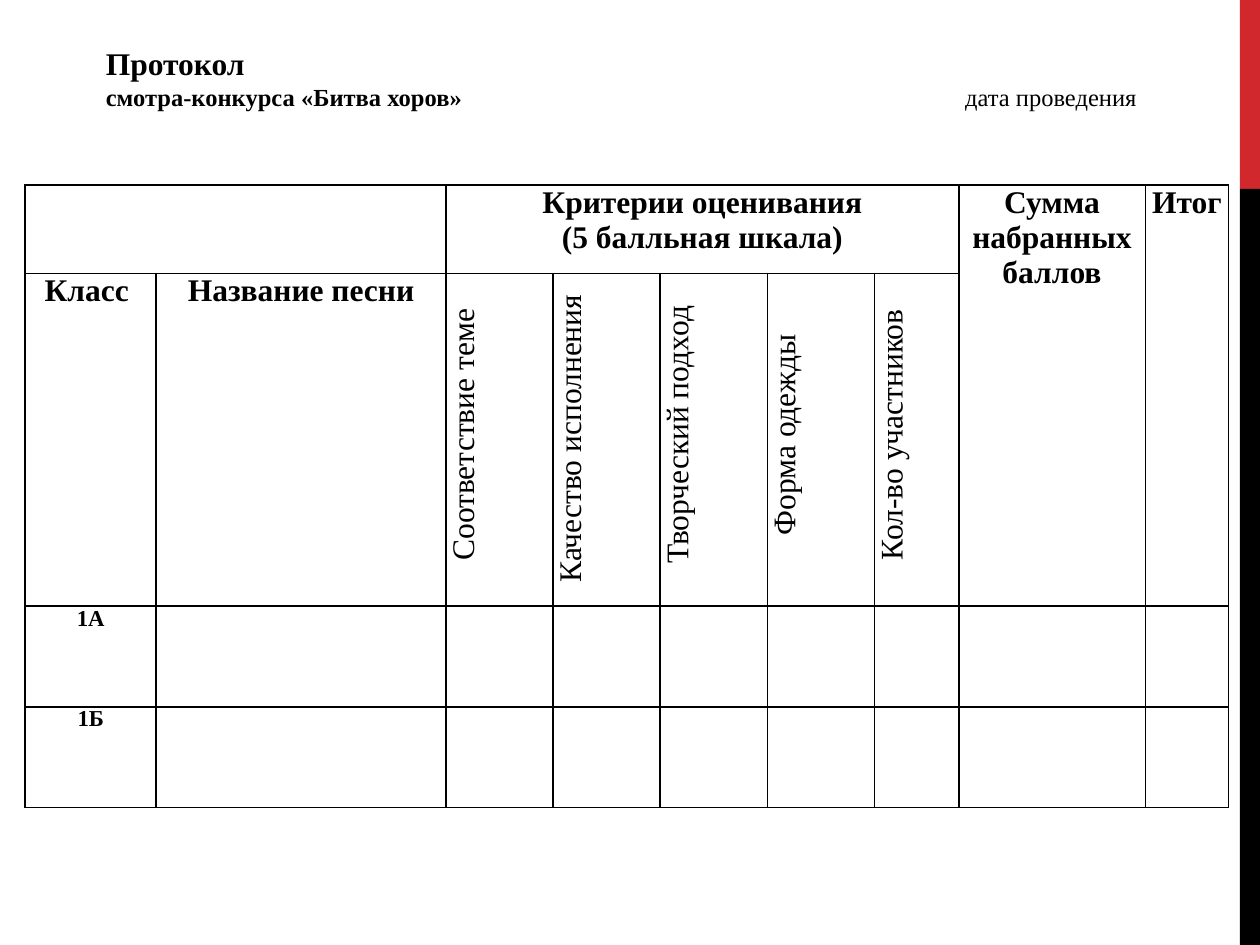
import pptx
import pptx.util
import pptx.dml.color
import pptx.enum.shapes
import pptx.enum.text
import pptx.oxml
import pptx.oxml.ns
from pptx.util import Inches

BLACK = pptx.dml.color.RGBColor(0x00, 0x00, 0x00)
RED = pptx.dml.color.RGBColor(0xD1, 0x28, 0x2E)
FONT = "Times New Roman"
NS = pptx.oxml.ns.nsdecls("a")


class ProtocolSlide:
    def __init__(self, slide):
        self.slide = slide

    def style(self, font, size, bold):
        font.name = FONT
        font.size = pptx.util.Pt(size)
        font.bold = bold
        font.color.rgb = BLACK

    def bar(self, left, top, width, height, color):
        bar = self.slide.shapes.add_shape(
            pptx.enum.shapes.MSO_SHAPE.RECTANGLE,
            Inches(left), Inches(top), Inches(width), Inches(height))
        bar.shadow.inherit = False
        bar.fill.solid()
        bar.fill.fore_color.rgb = color
        bar.line.fill.background()

    def heading(self, title, subtitle, date_label):
        box = self.slide.shapes.add_textbox(
            Inches(0), Inches(0.3), Inches(10), Inches(0.64))
        frame = box.text_frame
        frame.word_wrap = True
        frame.vertical_anchor = pptx.enum.text.MSO_ANCHOR.MIDDLE
        frame.margin_left = Inches(0.84)

        title_line = frame.paragraphs[0]
        title_line.text = title
        self.style(title_line.font, 18, True)

        # The date label starts at a tab stop on the subtitle line
        subtitle_line = frame.add_paragraph()
        properties = subtitle_line._p.get_or_add_pPr()
        properties.append(pptx.oxml.parse_xml(
            f'<a:tabLst {NS}><a:tab pos="{Inches(6.82)}" algn="l"/></a:tabLst>'))
        for text, bold in ((subtitle, True), ("\t" + date_label, False)):
            run = subtitle_line.add_run()
            run.text = text
            self.style(run.font, 14, bold)

    def table(self, left, top, widths, heights):
        frame = self.slide.shapes.add_table(
            len(heights), len(widths), Inches(left), Inches(top),
            Inches(sum(widths)), Inches(sum(heights)))
        table = frame.table
        table.first_row = False
        table.horz_banding = False
        for column, width in zip(table.columns, widths):
            column.width = Inches(width)
        for row, height in zip(table.rows, heights):
            row.height = Inches(height)
            for cell in row.cells:
                cell.fill.background()
                self.borders(cell)
        return table

    def borders(self, cell):
        properties = cell._tc.get_or_add_tcPr()
        for position, side in enumerate("LRTB"):
            properties.insert(position, pptx.oxml.parse_xml(
                f'<a:ln{side} {NS} w="{pptx.util.Pt(1)}"><a:solidFill>'
                f'<a:srgbClr val="{BLACK}"/></a:solidFill></a:ln{side}>'))

    def cell(self, cell, lines, size=18, bold=True, side_margin=0, vertical=False):
        cell.margin_top = cell.margin_bottom = 0
        cell.margin_left = cell.margin_right = Inches(side_margin)
        cell.text = "\n".join(lines)
        if vertical:
            cell._tc.get_or_add_tcPr().set("vert", "vert270")
        for paragraph in cell.text_frame.paragraphs:
            paragraph.alignment = pptx.enum.text.PP_ALIGN.CENTER
            if vertical:
                paragraph._p.get_or_add_pPr().set("marL", str(Inches(0.08)))
            self.style(paragraph.font, size, bold)


def main():
    deck = pptx.Presentation()
    deck.slide_width = Inches(10)
    deck.slide_height = Inches(7.5)
    page = ProtocolSlide(deck.slides.add_slide(deck.slide_layouts[6]))

    # Edge bars
    page.bar(9.84, 0, 0.16, 1.5, RED)
    page.bar(9.84, 1.5, 0.16, 6, BLACK)

    # Score table
    scores = page.table(0.2, 1.47,
                        [1.04, 2.3] + [0.85] * 4 + [0.67, 1.48, 0.66],
                        [0.7, 2.64, 0.8, 0.8])
    for first, last in (((0, 0), (0, 1)), ((0, 2), (0, 6)),
                        ((0, 7), (1, 7)), ((0, 8), (1, 8))):
        scores.cell(*first).merge(scores.cell(*last))

    # Column headings
    headings = {
        (0, 2): ["Критерии оценивания", "(5 балльная шкала)"],
        (0, 7): ["Сумма набранных баллов"],
        (0, 8): ["Итог"],
        (1, 0): ["Класс "],
        (1, 1): ["Название песни"],
    }
    for place, lines in headings.items():
        page.cell(scores.cell(*place), lines)

    # Criteria, turned to read upwards
    criteria = ["Соответствие теме", "Качество исполнения ", "Творческий подход",
                "Форма одежды", "Кол-во участников"]
    for column, criterion in enumerate(criteria, start=2):
        page.cell(scores.cell(1, column), [criterion], bold=False, vertical=True)

    # Classes
    for row, class_name in enumerate(["1А", "1Б"], start=2):
        page.cell(scores.cell(row, 0), [class_name], size=13, side_margin=0.07)

    # Heading
    page.heading("Протокол", "смотра-конкурса «Битва хоров»", "дата проведения")

    deck.save("out.pptx")


if __name__ == "__main__":
    main()
